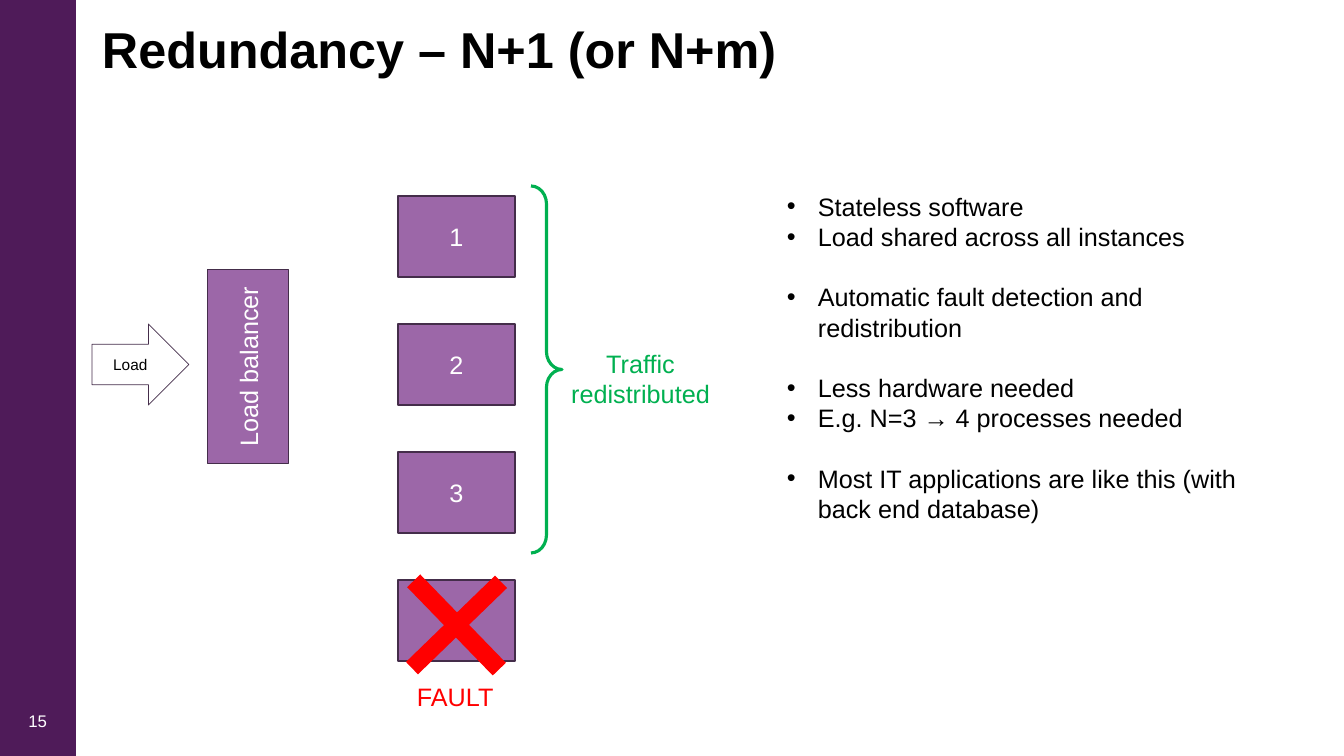
from lxml import etree
from pptx import Presentation
from pptx import util as u
from pptx.dml.color import RGBColor
from pptx.enum import shapes, text
from pptx.oxml import ns

EMU_PER_PX = 914400 / 100.8
FONT = "Arial"
BLACK = RGBColor(0x00, 0x00, 0x00)
WHITE = RGBColor(0xFF, 0xFF, 0xFF)
PLUM = RGBColor(0x4F, 0x1B, 0x59)
PURPLE = RGBColor(0x9C, 0x67, 0xA8)
EDGE = RGBColor(0x44, 0x2D, 0x4A)
RED = RGBColor(0xFF, 0x00, 0x00)
GREEN = RGBColor(0x00, 0xB0, 0x50)
LEFT, CENTER, RIGHT = text.PP_ALIGN.LEFT, text.PP_ALIGN.CENTER, text.PP_ALIGN.RIGHT
TOP, MIDDLE = text.MSO_ANCHOR.TOP, text.MSO_ANCHOR.MIDDLE
SHAPE = shapes.MSO_SHAPE

BENEFIT_GROUPS = [
    ["Stateless software", "Load shared across all instances"],
    ["Automatic fault detection and redistribution"],
    ["Less hardware needed", "E.g. N=3 → 4 processes needed"],
    ["Most IT applications are like this (with back end database)"],
]


def px(length):
    return u.Emu(round(length * EMU_PER_PX))


def style_runs(paragraph, size, color, bold=False):
    for run in paragraph.runs:
        run.font.name = FONT
        run.font.size = u.Pt(size)
        run.font.bold = bold
        run.font.color.rgb = color


def add_block(slide, kind, box, fill=None, line=None, line_width=1):
    block = slide.shapes.add_shape(kind, *map(px, box))
    block.shadow.inherit = False
    if fill is None:
        block.fill.background()
    else:
        block.fill.solid()
        block.fill.fore_color.rgb = fill
    if line is None:
        block.line.fill.background()
    else:
        block.line.color.rgb = line
        block.line.width = u.Pt(line_width)
    return block


def write_label(block, wording, size=18, color=WHITE):
    frame = block.text_frame
    frame.text = wording
    frame.vertical_anchor = MIDDLE
    frame.paragraphs[0].alignment = CENTER
    style_runs(frame.paragraphs[0], size, color)


def add_text(slide, box, wording, size, color, align=LEFT, anchor=TOP, bold=False, wrap=True):
    frame = slide.shapes.add_textbox(*map(px, box)).text_frame
    frame.word_wrap = wrap
    frame.vertical_anchor = anchor
    frame.text = wording
    frame.paragraphs[0].alignment = align
    style_runs(frame.paragraphs[0], size, color, bold)
    return frame


def add_bullets(slide, box, groups):
    frame = slide.shapes.add_textbox(*map(px, box)).text_frame
    frame.word_wrap = True
    frame.text = "\n".join(item for group in groups for item in group)
    group_starts = {sum(map(len, groups[:i])) for i in range(1, len(groups))}
    for index, benefit in enumerate(frame.paragraphs):
        properties = benefit._p.get_or_add_pPr()
        properties.set("marL", str(px(31)))
        properties.set("indent", str(px(-31)))
        if index in group_starts:
            benefit.space_before = u.Pt(21.6)
        etree.SubElement(properties, ns.qn("a:buFont")).set("typeface", FONT)
        etree.SubElement(properties, ns.qn("a:buChar")).set("char", "•")
        style_runs(benefit, 18, BLACK)


def add_servers(slide):
    for index in range(4):
        server = add_block(slide, SHAPE.RECTANGLE, (398, 196 + 128 * index, 117, 81), PURPLE, EDGE)
        write_label(server, str(index + 1))


def add_load_path(slide):
    balancer = add_block(slide, SHAPE.RECTANGLE, (151, 326, 194, 81), PURPLE, EDGE)
    balancer.rotation = 270
    write_label(balancer, "Load balancer")
    load = add_block(slide, SHAPE.RIGHT_ARROW, (92, 324, 97, 81), line=EDGE, line_width=0.5)
    write_label(load, "Load", 11, BLACK)
    frame = load.text_frame
    frame.margin_left = frame.margin_right = frame.margin_top = frame.margin_bottom = 0


def add_fault(slide):
    cross = add_block(slide, SHAPE.CROSS, (395, 563, 123, 124), RED)
    cross.adjustments[0] = 0.43
    cross.rotation = 45.9
    add_text(slide, (407, 676, 98, 40), "FAULT", 18, RED, wrap=False)


def add_redistribution(slide):
    add_text(slide, (550, 343, 181, 71), "Traffic redistributed", 18, GREEN, CENTER)
    brace = add_block(slide, SHAPE.RIGHT_BRACE, (531, 186, 31, 367), line=GREEN, line_width=2.25)
    brace.adjustments[0] = 0.58
    brace.adjustments[1] = 0.5


def main():
    deck = Presentation()
    deck.slide_width, deck.slide_height = px(1344), px(756)
    slide = deck.slides.add_slide(deck.slide_layouts[6])
    add_block(slide, SHAPE.RECTANGLE, (0, 0, 76, 756), PLUM)
    title = add_text(slide, (92, 20, 1228, 69), "Redundancy – N+1 (or N+m)", 36, BLACK, bold=True)
    title.paragraphs[0].line_spacing = 0.9
    add_servers(slide)
    add_bullets(slide, (777, 186, 475, 346), BENEFIT_GROUPS)
    add_load_path(slide)
    add_text(slide, (12, 701, 45, 40), "15", 12, WHITE, RIGHT, MIDDLE)
    add_fault(slide)
    add_redistribution(slide)
    deck.save("out.pptx")


if __name__ == "__main__":
    main()
